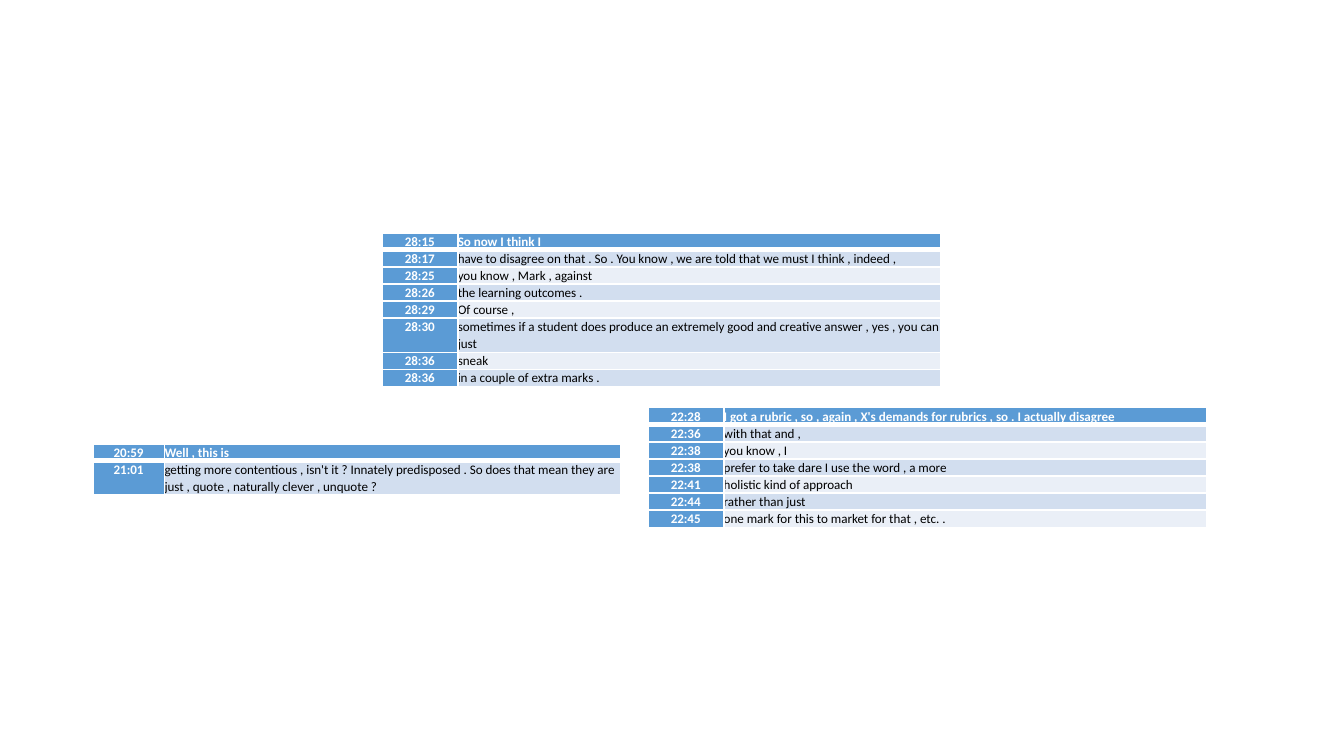
import pptx
import pptx.util
import pptx.dml.color
import pptx.enum.text
import pptx.oxml.ns
from lxml import etree

Pt = pptx.util.Pt
COLORS = {
    "accent": "5B9BD5",
    "band_dark": "D2DEEF",
    "band_light": "EAEFF7",
    "white": "FFFFFF",
    "black": "000000",
}
TIME_SHARE = 0.136  # share of the table width taken by the time column

OPINION = [
    ("20:59", "Well , this is"),
    ("21:01", "getting more contentious , isn't it ? Innately predisposed . So does that "
              "mean they are just , quote , naturally clever , unquote ?"),
]
MARKING = [
    ("28:15", "So now I think I"),
    ("28:17", "have to disagree on that . So . You know , we are told that we must "
              "I think , indeed ,"),
    ("28:25", "you know , Mark , against"),
    ("28:26", "the learning outcomes ."),
    ("28:29", "Of course ,"),
    ("28:30", "sometimes if a student does produce an extremely good and creative "
              "answer , yes , you can just"),
    ("28:36", "sneak"),
    ("28:36", "in a couple of extra marks ."),
]
RUBRIC = [
    ("22:28", "I got a rubric , so , again , X's demands for rubrics , so . "
              "I actually disagree"),
    ("22:36", "with that and ,"),
    ("22:38", "you know , I"),
    ("22:38", "prefer to take dare I use the word , a more"),
    ("22:41", "holistic kind of approach"),
    ("22:44", "rather than just"),
    ("22:45", "one mark for this to market for that , etc. ."),
]


def rgb(name):
    return pptx.dml.color.RGBColor.from_string(COLORS[name])


def set_borders(cell, bottom_width):
    """Draw white lines on all four sides; only the bottom width varies."""
    qn = pptx.oxml.ns.qn
    properties = cell._tc.get_or_add_tcPr()
    for side, width in (("L", 1), ("R", 1), ("T", 1), ("B", bottom_width)):
        line = etree.SubElement(properties, qn(f"a:ln{side}"), w=str(Pt(width)))
        fill = etree.SubElement(line, qn("a:solidFill"))
        etree.SubElement(fill, qn("a:srgbClr"), val=COLORS["white"])


def style_cell(cell, text, fill, highlighted, centered, bottom_width):
    set_borders(cell, bottom_width)
    cell.fill.solid()
    cell.fill.fore_color.rgb = rgb(fill)
    cell.margin_left = cell.margin_right = cell.margin_top = cell.margin_bottom = 0
    cell.text = text
    paragraph = cell.text_frame.paragraphs[0]
    align = pptx.enum.text.PP_ALIGN
    paragraph.alignment = align.CENTER if centered else align.LEFT
    paragraph.line_spacing = 1.07
    paragraph.space_after = Pt(8)
    paragraph.font.name = "Calibri"
    paragraph.font.size = Pt(7)
    paragraph.font.bold = highlighted
    paragraph.font.color.rgb = rgb("white" if highlighted else "black")


def add_transcript(slide, left, top, width, row_height, lines, two_line_row):
    """Place a table of times and spoken lines; one row holds two lines of text."""
    height = row_height * (len(lines) + (two_line_row is not None))
    frame = slide.shapes.add_table(len(lines), 2, Pt(left), Pt(top), Pt(width), Pt(height))
    table = frame.table
    table.columns[0].width = Pt(width * TIME_SHARE)
    table.columns[1].width = Pt(width * (1 - TIME_SHARE))
    for index, (time, words) in enumerate(lines):
        table.rows[index].height = Pt(row_height * (2 if index == two_line_row else 1))
        header = index == 0
        band = "accent" if header else "band_dark" if index % 2 else "band_light"
        bottom_width = 3 if header else 1
        style_cell(table.cell(index, 0), time, "accent", True, True, bottom_width)
        style_cell(table.cell(index, 1), words, band, header, False, bottom_width)


def main():
    presentation = pptx.Presentation()
    presentation.slide_width = Pt(720)
    presentation.slide_height = Pt(405)
    slide = presentation.slides.add_slide(presentation.slide_layouts[6])

    # Three transcript extracts
    add_transcript(slide, 49.7, 237.7, 282.8, 8.2, OPINION, 1)
    add_transcript(slide, 204.5, 124.7, 299.7, 8.6, MARKING, 5)
    add_transcript(slide, 347, 218.4, 299.7, 8.6, RUBRIC, None)

    presentation.save("out.pptx")


if __name__ == "__main__":
    main()
